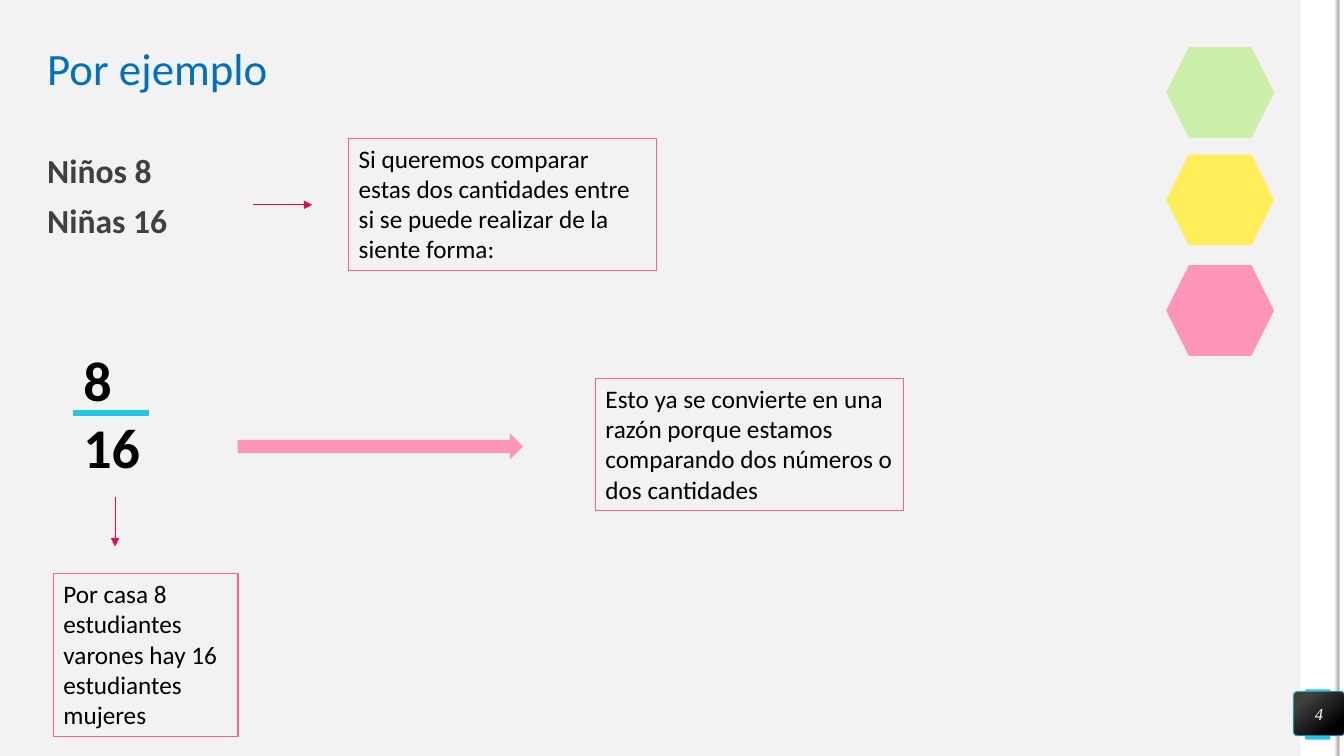
from lxml import etree
from pptx import Presentation
from pptx.dml.color import RGBColor
from pptx.enum.shapes import MSO_CONNECTOR as CONNECTOR, MSO_SHAPE as SHAPE
from pptx.enum.text import MSO_ANCHOR as ANCHOR, MSO_AUTO_SIZE as AUTO_SIZE, PP_ALIGN as ALIGN
from pptx.oxml.ns import qn
from pptx.util import Cm, Pt

COLORS = {
    "background": "F2F2F2", "white": "FFFFFF", "black": "000000",
    "blue": "0070C0", "cyan": "25C6E3", "gray": "404040", "shade": "A6A6A6",
    "outline": "FC5F95", "arrow": "E80554",
    "green": "CBEEA9", "yellow": "FFED59", "pink": "FD94B9",
}
WIDTH, HEIGHT = 33.87, 19.05


def rgb(name):
    return RGBColor.from_string(COLORS[name])


def add_block(slide, kind, box, fill=None, line=None, weight=0.75):
    shape = slide.shapes.add_shape(kind, *map(Cm, box))
    shape.shadow.inherit = False
    if fill:
        shape.fill.solid()
        shape.fill.fore_color.rgb = rgb(fill)
    else:
        shape.fill.background()
    if line:
        shape.line.color.rgb = rgb(line)
        shape.line.width = Pt(weight)
    else:
        shape.line.fill.background()
    return shape


def set_gradient(shape, stops, angle):
    shape.fill.gradient()
    shape.fill.gradient_angle = angle
    for stop, (position, color) in zip(shape.fill.gradient_stops, stops):
        stop.position = position
        stop.color.rgb = rgb(color)


def write(shape, lines, size, color, bold=False, italic=False, font="Calibri",
          align=ALIGN.LEFT, anchor=ANCHOR.TOP, spacing=1.0, gap=0, inset=True):
    frame = shape.text_frame
    frame.word_wrap = True
    frame.auto_size = AUTO_SIZE.NONE
    frame.vertical_anchor = anchor
    if not inset:
        frame.margin_left = frame.margin_right = frame.margin_top = frame.margin_bottom = 0
    frame.text = "\n".join(lines)
    for index, paragraph in enumerate(frame.paragraphs):
        paragraph.alignment = align
        paragraph.line_spacing = spacing
        paragraph.space_before = Pt(gap if index else 0)
        paragraph.font.name = font
        paragraph.font.size = Pt(size)
        paragraph.font.bold = bold
        paragraph.font.italic = italic
        paragraph.font.color.rgb = rgb(color)


def add_line(slide, start, end, color, weight, arrow=False):
    connector = slide.shapes.add_connector(CONNECTOR.STRAIGHT, *map(Cm, start + end))
    connector.line.color.rgb = rgb(color)
    connector.line.width = Pt(weight)
    if arrow:
        etree.SubElement(connector.line._get_or_add_ln(), qn("a:tailEnd"), type="triangle")
    etree.SubElement(connector._element.spPr, qn("a:effectLst"))


def add_note(slide, box, text):
    note = add_block(slide, SHAPE.RECTANGLE, box, line="outline")
    write(note, [text], 18, "black")


def add_side_strip(slide, left, number):
    # White band, cyan tab and shaded right edge
    add_block(slide, SHAPE.RECTANGLE, (left, 0, 0.99, HEIGHT), "white")
    tab = add_block(slide, SHAPE.ROUNDED_RECTANGLE, (left + 0.12, 17.37, 0.64, 1.27), "cyan")
    tab.adjustments[0] = 0.07
    add_block(slide, SHAPE.RECTANGLE, (left + 0.97, 0, 0.13, HEIGHT), "white")
    edge = add_block(slide, SHAPE.RECTANGLE, (left + 0.85, 0, 0.13, HEIGHT))
    set_gradient(edge, [(0, "white"), (1, "shade")], 0)
    # Slide number badge
    badge = add_block(slide, SHAPE.ROUNDED_RECTANGLE, (left - 0.18, 17.42, 1.3, 1.12),
                      line="cyan", weight=0.5)
    badge.adjustments[0] = 0.1
    set_gradient(badge, [(0.2, "gray"), (0.82, "black")], 310)
    write(badge, [number], 12, "white", italic=True, font="Times New Roman",
          align=ALIGN.CENTER, anchor=ANCHOR.MIDDLE, inset=False)


def add_title(slide, box):
    title = slide.shapes.title
    title.left, title.top, title.width, title.height = map(Cm, box)
    write(title, ["Por ejemplo"], 32, "blue", anchor=ANCHOR.MIDDLE, spacing=0.9, inset=False)


def add_quantities(slide, left, top):
    counts = slide.shapes.add_textbox(Cm(left), Cm(top), Cm(4.47), Cm(2.92))
    write(counts, ["Niños 8", "Niñas 16"], 24, "gray", bold=True,
          spacing=0.9, gap=10, inset=False)
    arrow_y = top + 1.27
    add_line(slide, (left + 5.19, arrow_y), (left + 6.68, arrow_y), "arrow", 0.5, arrow=True)
    add_note(slide, (left + 7.6, top - 0.41, 7.75, 3.33),
             "Si queremos comparar estas dos cantidades entre si se puede "
             "realizar de la siente forma:")


def add_ratio(slide, left, top):
    # Fraction
    fraction = slide.shapes.add_textbox(Cm(left), Cm(top), Cm(3.61), Cm(3.68))
    write(fraction, ["8", "16"], 40, "black", bold=True)
    bar_y = top + 1.82
    add_line(slide, (left, bar_y), (left + 1.91, bar_y), "cyan", 4.5)
    # Reading of the fraction
    arrow_x = left + 1.05
    add_line(slide, (arrow_x, top + 3.93), (arrow_x, top + 5.18), "arrow", 0.5, arrow=True)
    add_note(slide, (left - 0.5, top + 5.86, 4.65, 4.11),
             "Por casa 8 estudiantes varones hay 16 estudiantes mujeres")
    # Conclusion
    add_block(slide, SHAPE.RIGHT_ARROW, (left + 4.14, top + 2.33, 7.19, 0.66), "pink")
    add_note(slide, (left + 13.16, top + 0.94, 7.75, 3.33),
             "Esto ya se convierte en una razón porque estamos comparando "
             "dos números o dos cantidades")


def add_hexagons(slide, left):
    for top, color in ((1.19, "green"), (3.89, "yellow"), (6.68, "pink")):
        add_block(slide, SHAPE.HEXAGON, (left, top, 2.72, 2.29), color)


def main():
    presentation = Presentation()
    presentation.slide_width, presentation.slide_height = Cm(WIDTH), Cm(HEIGHT)
    slide = presentation.slides.add_slide(presentation.slide_layouts[5])
    slide.background.fill.solid()
    slide.background.fill.fore_color.rgb = rgb("background")
    add_side_strip(slide, 32.77, "4")
    add_title(slide, (1.19, 1.19, 15.19, 1.19))
    add_quantities(slide, 1.19, 3.89)
    add_ratio(slide, 1.85, 8.59)
    add_hexagons(slide, 29.39)
    presentation.save("out.pptx")


if __name__ == "__main__":
    main()
